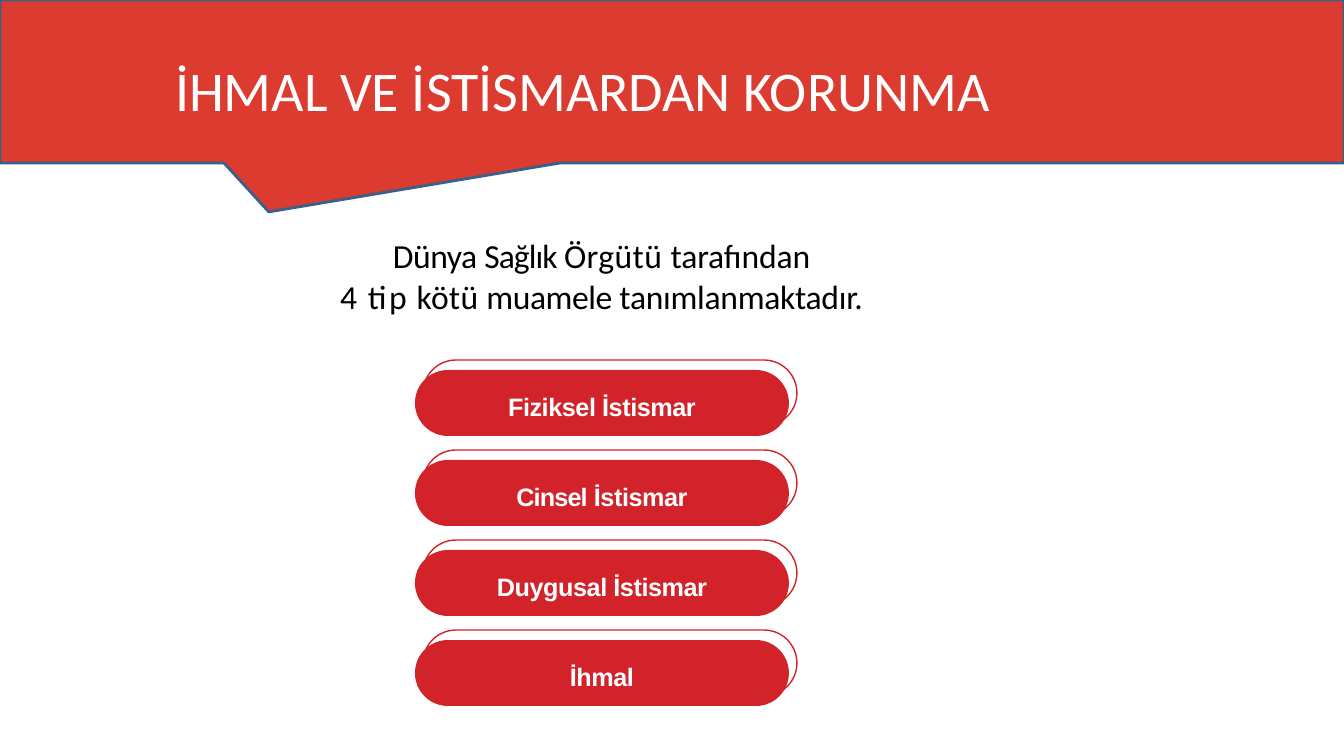
import dataclasses
import typing

import pptx
import pptx.dml.color
import pptx.enum.shapes
import pptx.enum.text
import pptx.util

SCALE = 12192000 / 1344  # EMU in one px
SHAPE = pptx.enum.shapes.MSO_SHAPE
MIDDLE = pptx.enum.text.MSO_ANCHOR.MIDDLE
CENTER = pptx.enum.text.PP_ALIGN.CENTER


@dataclasses.dataclass(frozen=True)
class Theme:
    banner: str = "DC3C30"
    edge: str = "3A5F8C"
    pill: str = "D2232A"
    light: str = "FFFFFF"
    dark: str = "000000"
    sans: str = "Calibri"
    label: str = "Arial"
    title: int = 40
    body: int = 24
    small: int = 18


class Box(typing.NamedTuple):
    left: int
    top: int
    width: int
    height: int


class Run(typing.NamedTuple):
    text: str
    gap: int = 0  # letter spacing in hundredths of a point


class Style(typing.NamedTuple):
    face: str
    size: int
    color: str
    bold: bool = False


THEME = Theme()

# Content
TITLE = [[Run("İHMAL VE İSTİSMARDAN KORUNMA")]]
INTRO = [
    [Run("Dünya ", -30), Run("Sağlık ", -70), Run("Örgütü ", 30), Run("tarafından", -10)],
    [Run("4 ", 110), Run("tip ", 80), Run("kötü ", 20), Run("muamele ", -30),
     Run("tanımlanmaktadır.", -20)],
]
TYPES = [
    [Run("Fiziksel İstismar", -30)],
    [Run("Cinsel ", -60), Run("İstismar", -30)],
    [Run("Duygusal İstismar", -30)],
    [Run("İhmal", -30)],
]

# Layout
BANNER = Box(0, 0, 1344, 163)
HEAD = Box(0, 36, 1165, 107)
LEAD = Box(224, 234, 755, 83)
RING = Box(423, 360, 374, 66)
PILL = Box(415, 370, 374, 66)
STEP = 90
DROP = 6  # top inset that lowers the pill labels


def px(value: float) -> int:
    return round(value * SCALE)


def place(box: Box) -> list[int]:
    return [px(side) for side in box]


def rgb(code: str) -> pptx.dml.color.RGBColor:
    return pptx.dml.color.RGBColor.from_string(code)


def draw(slide, kind, box: Box, adjust: list[float], fill: str = "",
         line: str = "", weight: int = 1):
    shape = slide.shapes.add_shape(kind, *place(box))
    shape.shadow.inherit = False
    for index, value in enumerate(adjust):
        shape.adjustments[index] = value
    if fill:
        shape.fill.solid()
        shape.fill.fore_color.rgb = rgb(fill)
    else:
        shape.fill.background()
    if line:
        shape.line.color.rgb = rgb(line)
        shape.line.width = pptx.util.Pt(weight)
    else:
        shape.line.fill.background()
    return shape


def write(shape, lines: list[list[Run]], style: Style, drop: int = 0) -> None:
    frame = shape.text_frame
    layout = {"word_wrap": True, "vertical_anchor": MIDDLE, "margin_left": 0,
              "margin_right": 0, "margin_top": px(drop), "margin_bottom": 0}
    for name, value in layout.items():
        setattr(frame, name, value)
    form = {"name": style.face, "size": pptx.util.Pt(style.size), "bold": style.bold}
    for index, runs in enumerate(lines):
        para = frame.add_paragraph() if index else frame.paragraphs[0]
        para.alignment = CENTER
        for item in runs:
            run = para.add_run()
            run.text = item.text
            for name, value in form.items():
                setattr(run.font, name, value)
            run.font.color.rgb = rgb(style.color)
            if item.gap:
                run._r.get_or_add_rPr().set("spc", str(item.gap))


def main() -> None:
    deck = pptx.Presentation()
    deck.slide_width, deck.slide_height = px(1344), px(756)
    slide = deck.slides.add_slide(deck.slide_layouts[6])

    # Banner and title
    draw(slide, SHAPE.RECTANGULAR_CALLOUT, BANNER, [-0.3, 0.8],
         THEME.banner, THEME.edge, 2)
    write(slide.shapes.add_textbox(*place(HEAD)), TITLE,
          Style(THEME.sans, THEME.title, THEME.light))

    # Lead text
    write(slide.shapes.add_textbox(*place(LEAD)), INTRO,
          Style(THEME.sans, THEME.body, THEME.dark))

    # Pills, each over an offset ring
    style = Style(THEME.label, THEME.small, THEME.light, True)
    for index, runs in enumerate(TYPES):
        ring, pill = (box._replace(top=box.top + index * STEP) for box in (RING, PILL))
        draw(slide, SHAPE.ROUNDED_RECTANGLE, ring, [0.5], line=THEME.pill)
        shape = draw(slide, SHAPE.ROUNDED_RECTANGLE, pill, [0.5], THEME.pill)
        write(shape, [runs], style, DROP)

    deck.save("out.pptx")


if __name__ == "__main__":
    main()
